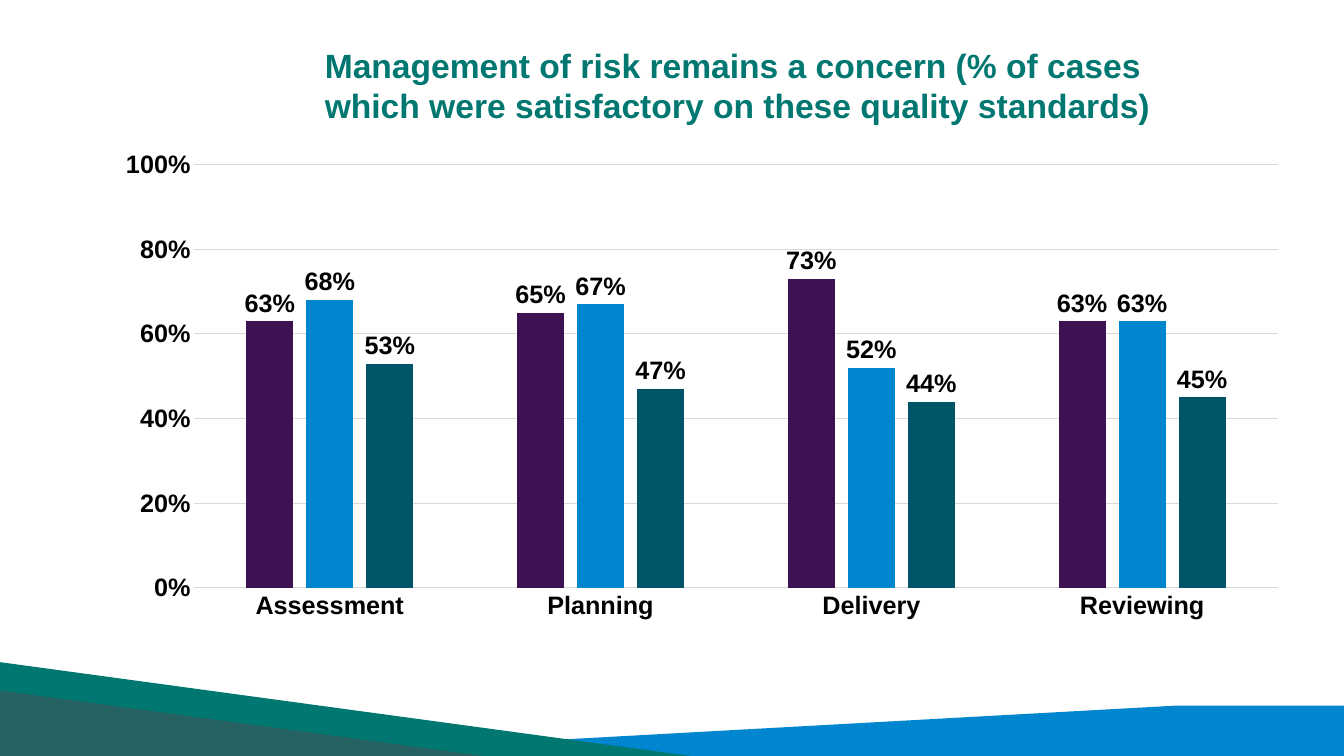
from dataclasses import dataclass

from lxml.etree import SubElement
from pptx import Presentation
from pptx.chart.data import CategoryChartData as Data
from pptx.dml.color import RGBColor as Rgb
from pptx.enum.chart import XL_CHART_TYPE as Kind, XL_LABEL_POSITION as Spot, XL_TICK_MARK as Tick
from pptx.enum.shapes import MSO_SHAPE as Form
from pptx.enum.text import MSO_ANCHOR as Anchor, MSO_AUTO_SIZE as Fit, PP_ALIGN as Align
from pptx.oxml import parse_xml
from pptx.oxml.ns import nsdecls, qn
from pptx.util import Pt


@dataclass(frozen=True)
class Theme:
    font: str = "Arial"
    head: int = 24
    text: int = 18
    ink: str = "000000"
    teal: str = "007770"
    blue: str = "0085CF"
    slate: str = "4D4E53"
    plum: str = "3D1152"
    deep: str = "005569"
    grid: str = "D9D9D9"


class Deck:
    def __init__(self, theme, wide, high):
        self.theme = theme
        self.prs = Presentation()
        self.prs.slide_width, self.prs.slide_height = Pt(wide), Pt(high)
        self.slide = self.prs.slides.add_slide(self.prs.slide_layouts[5])

    def style(self, font, size, color):
        font.name, font.size, font.bold = self.theme.font, Pt(size), True
        font.color.rgb = Rgb.from_string(color)

    def paint(self, shape, color, alpha=100):
        """Give a shape a flat fill, with alpha in percent."""
        shape.shadow.inherit = False
        shape.line.fill.background()
        shape.fill.solid()
        shape.fill.fore_color.rgb = Rgb.from_string(color)
        if alpha < 100:
            tint = shape.fill._xPr.find(".//" + qn("a:srgbClr"))
            SubElement(tint, qn("a:alpha"), val=str(alpha * 1000))

    def title(self, text, box):
        shape = self.slide.shapes.title
        shape.left, shape.top, shape.width, shape.height = map(Pt, box)
        frame = shape.text_frame
        frame.text = text
        frame.word_wrap, frame.auto_size = True, Fit.NONE
        frame.vertical_anchor = Anchor.MIDDLE
        para = frame.paragraphs[0]
        para.alignment = Align.LEFT
        self.style(para.font, self.theme.head, self.theme.teal)

    def wedge(self, box, color, alpha=100):
        shape = self.slide.shapes.add_shape(Form.RIGHT_TRIANGLE, *map(Pt, box))
        self.paint(shape, color, alpha)

    def band(self, points, color):
        start, *rest = [(Pt(x), Pt(y)) for x, y in points]
        pen = self.slide.shapes.build_freeform(*start)
        pen.add_line_segments(rest, close=True)
        self.paint(pen.convert_to_shape(), color)

    def columns(self, cats, rows, box, plot):
        """Draw clustered columns; rows map each colour to its values."""
        look = self.theme
        data = Data(number_format="0%")
        data.categories = cats
        for vals in rows.values():
            data.add_series("", vals)
        chart = self.slide.shapes.add_chart(Kind.COLUMN_CLUSTERED, *map(Pt, box), data).chart
        chart.has_title = chart.has_legend = False
        self.style(chart.font, look.text, look.ink)
        bars = chart.plots[0]
        bars.gap_width, bars.overlap, bars.vary_by_categories = 219, -27, False
        for series, color in zip(bars.series, rows):
            series.format.fill.solid()
            series.format.fill.fore_color.rgb = Rgb.from_string(color)
            tags = series.data_labels
            tags.show_value, tags.position = True, Spot.OUTSIDE_END
            tags.number_format, tags.number_format_is_linked = "0%", False
            self.style(tags.font, look.text, look.ink)
        self.axes(chart)
        self.place(chart, plot)

    def axes(self, chart):
        look, base, scale = self.theme, chart.category_axis, chart.value_axis
        for axis in (base, scale):
            axis.major_tick_mark = axis.minor_tick_mark = Tick.NONE
            self.style(axis.tick_labels.font, look.text, look.ink)
        scale.minimum_scale, scale.maximum_scale, scale.major_unit = 0, 1, 0.2
        scale.tick_labels.number_format = "0%"
        scale.tick_labels.number_format_is_linked = False
        scale.format.line.fill.background()
        for line in (base.format.line, scale.major_gridlines.format.line):
            line.color.rgb, line.width = Rgb.from_string(look.grid), Pt(0.75)

    def place(self, chart, plot):
        """Fix the inner plot area as fractions of the chart."""
        area = chart._chartSpace.chart.plotArea
        for old in area.findall(qn("c:layout")):
            area.remove(old)
        modes = '<c:layoutTarget val="inner"/><c:xMode val="edge"/><c:yMode val="edge"/>'
        sizes = "".join(f'<c:{key} val="{val}"/>' for key, val in zip("xywh", plot))
        area.insert(0, parse_xml(
            f'<c:layout {nsdecls("c")}><c:manualLayout>{modes}{sizes}</c:manualLayout></c:layout>'))


def main():
    look = Theme()
    wide, high = 960, 540
    deck = Deck(look, wide, high)
    deck.band([(188.6, high), (841, 504), (wide, 504), (wide, high)], look.blue)
    deck.wedge((0, 473, 493, 67), look.teal)
    deck.wedge((0, 493.2, 345, 46.8), look.slate, 50)
    deck.title("Management of risk remains a concern (% of cases which were "
               "satisfactory on these quality standards)", (224.8, 39, 622.8, 43.2))
    deck.columns(
        ["Assessment", "Planning", "Delivery", "Reviewing"],
        {look.plum: (0.63, 0.65, 0.73, 0.63),
         look.blue: (0.68, 0.67, 0.52, 0.63),
         look.deep: (0.53, 0.47, 0.44, 0.45)},
        (80, 106.5, 841, 373), (0.07, 0.03, 0.92, 0.81))
    deck.prs.save("out.pptx")


if __name__ == "__main__":
    main()
